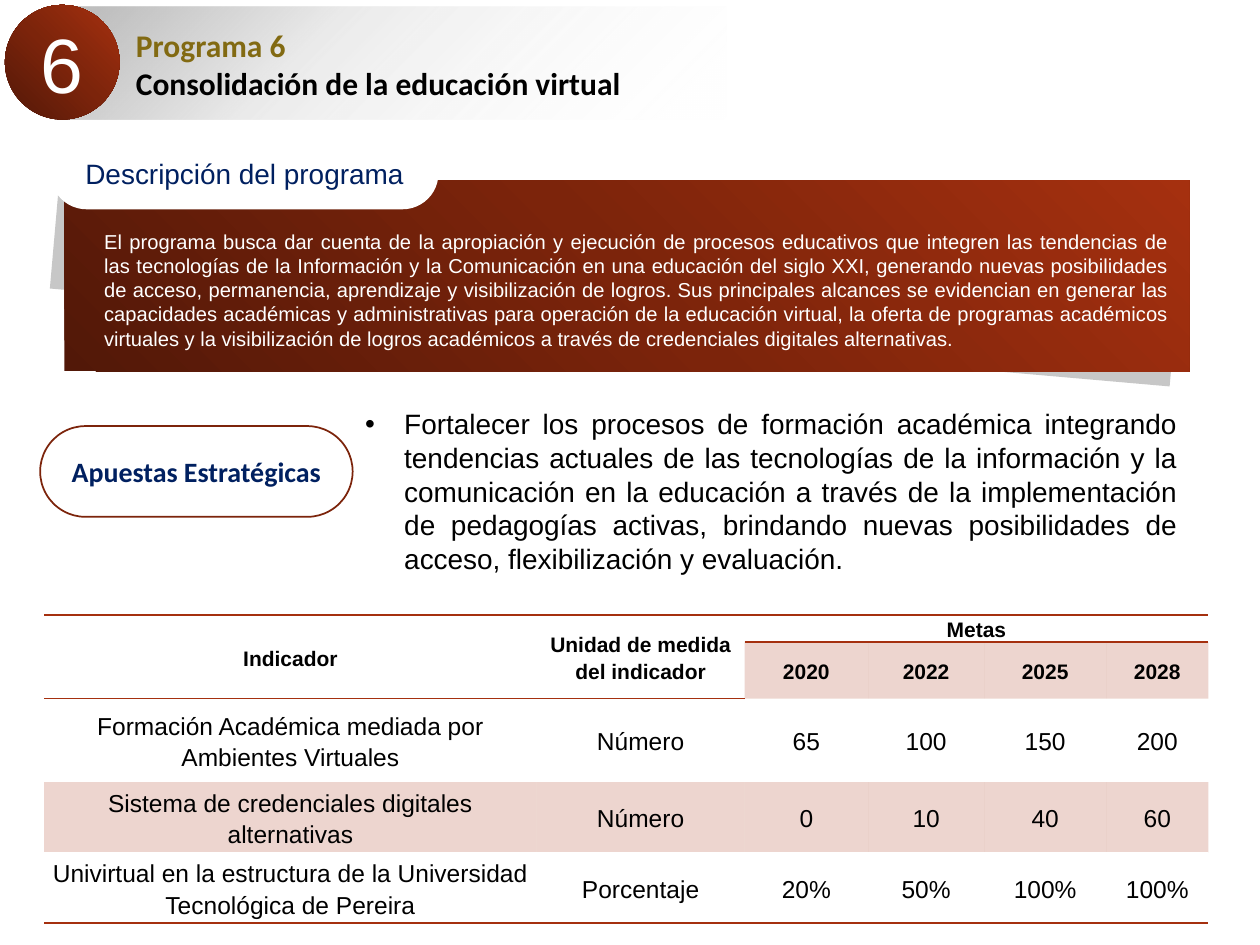
"""Build the slide for Programa 6, the consolidation of virtual education."""
from pptx import Presentation, util as u
from pptx.dml.color import RGBColor
from pptx.enum import shapes, text
from pptx.oxml import ns, xmlchemy

THEME = {
    "colors": {
        "rust": "A5300F", "brick": "7C240B", "maroon": "521808", "white": "FFFFFF",
        "black": "000000", "navy": "002060", "olive": "826A12", "silver": "BFBFBF",
        "shade": "323232",
    },
    "styles": {
        "number": {"name": "Arial", "size": u.Pt(44), "color": "white"},
        "program": {"name": "Calibri", "size": u.Pt(18), "bold": True, "color": "olive"},
        "title": {"name": "Calibri", "size": u.Pt(18), "bold": True, "color": "black"},
        "tab": {"name": "Arial", "size": u.Pt(16), "color": "navy"},
        "label": {"name": "Calibri", "size": u.Pt(16), "bold": True, "color": "navy"},
        "summary": {"name": "Arial", "size": u.Pt(11.5), "color": "white"},
        "bullet": {"name": "Arial", "size": u.Pt(16), "color": "black"},
        "header": {"name": "Arial", "size": u.Pt(12), "bold": True, "color": "black"},
        "body": {"name": "Arial", "size": u.Pt(14), "color": "black"},
    },
}
RUST_FADE = [(0, "maroon", 100), (50, "brick", 100), (100, "rust", 100)]
SILVER_FADE = [(5, "silver", 100), (37, "silver", 31), (100, "white", 0)]
TINT = ("rust", 20)
PLAIN = ("white", 100)

SUMMARY = (
    "El programa busca dar cuenta de la apropiación y ejecución de procesos educativos que "
    "integren las tendencias de las tecnologías de la Información y la Comunicación en una "
    "educación del siglo XXI, generando nuevas posibilidades de acceso, permanencia, "
    "aprendizaje y visibilización de logros. Sus principales alcances se evidencian en generar "
    "las capacidades académicas y administrativas para operación de la educación virtual, la "
    "oferta de programas académicos virtuales y la visibilización de logros académicos a "
    "través de credenciales digitales alternativas."
)
STRATEGY = (
    "Fortalecer los procesos de formación académica integrando tendencias actuales de las "
    "tecnologías de la información y la comunicación en la educación a través de la "
    "implementación de pedagogías activas, brindando nuevas posibilidades de acceso, "
    "flexibilización y evaluación."
)
SHAPES = [
    {"kind": "RECTANGLE", "at": (1.07, 4.32, 22.66, 2.49), "fill": ("shade", 27), "rotation": 5},
    {"kind": "RECTANGLE", "at": (1.3, 3.63, 22.68, 3.86), "fade": RUST_FADE, "angle": 45},
    {"kind": "ROUNDED_RECTANGLE", "at": (1.02, 2.77, 7.82, 1.45), "fill": PLAIN,
     "lines": [("Descripción del programa", "tab")]},
    {"kind": "RECTANGLE", "at": (0.15, 0.18, 5, 1.63), "fill": PLAIN, "line": "white"},
    {"kind": "RECTANGLE", "at": (1.3, 0.13, 13.34, 2.29), "fade": SILVER_FADE, "angle": 315},
    {"kind": "OVAL", "at": (0.1, 0.1, 2.31, 2.31), "fade": RUST_FADE, "angle": 45,
     "lines": [("6", "number")]},
    {"kind": "ROUNDED_RECTANGLE", "at": (0.81, 8.59, 6.3, 1.83), "fill": PLAIN, "line": "brick",
     "lines": [("Apuestas Estratégicas", "label")]},
]
TEXTS = [
    {"at": (1.85, 4.5, 21.95, 2.72), "lines": [(SUMMARY, "summary")]},
    {"at": (2.49, 0.41, 19.08, 1.8),
     "lines": [("Programa 6", "program"), ("Consolidación de la educación virtual", "title")]},
    {"at": (7.11, 8.08, 16.87, 3.68), "lines": [(STRATEGY, "bullet")]},
]
TABLE = {
    "at": (0.89, 12.4),
    "columns": (9.93, 4.19, 2.49, 2.34, 2.46, 2.06),
    "rows": (0.53, 1.14, 1.68, 1.42, 1.42),
    "merges": [((0, 0), (1, 0)), ((0, 1), (1, 1)), ((0, 2), (0, 5))],
    "cells": [
        ("Indicador", "Unidad de medida del indicador", "Metas", "", "", ""),
        ("", "", "2020", "2022", "2025", "2028"),
        ("Formación Académica mediada por Ambientes Virtuales", "Número", "65", "100", "150", "200"),
        ("Sistema de credenciales digitales alternativas", "Número", "0", "10", "40", "60"),
        ("Univirtual en la estructura de la Universidad Tecnológica de Pereira", "Porcentaje",
         "20%", "50%", "100%", "100%"),
    ],
}
NO_STYLE = "{2D5ABB26-0587-4C30-8999-92F81FD0307C}"


def rgb(name):
    return RGBColor.from_string(THEME["colors"][name])


def add_node(parent, tag, **attributes):
    node = xmlchemy.OxmlElement(tag)
    for key, value in attributes.items():
        node.set(key, str(value))
    parent.append(node)
    return node


def add_color(parent, name, alpha=100):
    color = add_node(parent, "a:srgbClr", val=THEME["colors"][name])
    if alpha < 100:
        add_node(color, "a:alpha", val=alpha * 1000)


def paint(fill, properties, name, alpha):
    fill.solid()
    solid = properties.find(ns.qn("a:solidFill"))
    add_color(solid, name, alpha)


def fade(shape, stops, angle):
    shape.fill.gradient()
    shape.fill.gradient_angle = angle
    stop_list = shape.element.spPr.find(ns.qn("a:gradFill")).find(ns.qn("a:gsLst"))
    for old in list(stop_list):
        stop_list.remove(old)
    for position, name, alpha in stops:
        add_color(add_node(stop_list, "a:gs", pos=position * 1000), name, alpha)


def write(frame, lines, align, spacing=None):
    for index, (words, style) in enumerate(lines):
        para = frame.add_paragraph() if index else frame.paragraphs[0]
        if style == "bullet":
            properties = para._p.get_or_add_pPr()
            indent = u.Cm(0.79)
            properties.set("marL", str(indent))
            properties.set("indent", str(-indent))
            add_node(properties, "a:buFont", typeface="Arial")
            add_node(properties, "a:buChar", char="•")
        para.alignment = align
        para.line_spacing = spacing
        span = para.add_run()
        span.text = words
        for key, value in THEME["styles"][style].items():
            if key == "color":
                span.font.color.rgb = rgb(value)
            else:
                setattr(span.font, key, value)


def draw_shape(page, item):
    shape = page.shapes.add_shape(getattr(shapes.MSO_SHAPE, item["kind"]), *map(u.Cm, item["at"]))
    shape.shadow.inherit = False
    shape.rotation = item.get("rotation", 0)
    if item["kind"] == "ROUNDED_RECTANGLE":
        shape.adjustments[0] = 0.5
    if "fade" in item:
        fade(shape, item["fade"], item["angle"])
    else:
        paint(shape.fill, shape.element.spPr, *item["fill"])
    if "line" in item:
        shape.line.color.rgb = rgb(item["line"])
        shape.line.width = u.Pt(1)
    else:
        shape.line.fill.background()
    if "lines" in item:
        shape.text_frame.vertical_anchor = text.MSO_ANCHOR.MIDDLE
        shape.text_frame.word_wrap = item["kind"] != "OVAL"
        write(shape.text_frame, item["lines"], text.PP_ALIGN.CENTER)


def draw_text(page, item):
    frame = page.shapes.add_textbox(*map(u.Cm, item["at"])).text_frame
    frame.word_wrap = True
    frame.auto_size = text.MSO_AUTO_SIZE.SHAPE_TO_FIT_TEXT
    write(frame, item["lines"], text.PP_ALIGN.JUSTIFY)


def format_cell(cell, row, column, words):
    margins = {"margin_left": u.Cm(0.13), "margin_right": u.Cm(0.13), "margin_top": 0,
               "margin_bottom": 0, "vertical_anchor": text.MSO_ANCHOR.MIDDLE}
    for key, value in margins.items():
        setattr(cell, key, value)
    properties = cell._tc.get_or_add_tcPr()
    edges = {"a:lnT": row == 0, "a:lnB": row in (0, 4) or (row == 1 and column < 2)}
    for tag, drawn in edges.items():
        if drawn:
            edge = add_node(properties, tag, w=u.Pt(1))
            add_color(add_node(edge, "a:solidFill"), "rust")
    if row == 0 or (row == 1 and column < 2):
        cell.fill.background()
    else:
        paint(cell.fill, properties, *(TINT if row % 2 else PLAIN))
    if words:
        style = "header" if row < 2 else "body"
        write(cell.text_frame, [(words, style)], text.PP_ALIGN.CENTER, 1.15)


def draw_table(page):
    columns, rows = TABLE["columns"], TABLE["rows"]
    size = (sum(columns), sum(rows))
    table = page.shapes.add_table(len(rows), len(columns), *map(u.Cm, TABLE["at"] + size)).table
    table.first_row = table.horz_banding = False
    table._tbl.tblPr.find(ns.qn("a:tableStyleId")).text = NO_STYLE
    for column, width in zip(table.columns, columns):
        column.width = u.Cm(width)
    for row, height in zip(table.rows, rows):
        row.height = u.Cm(height)
    for start, end in TABLE["merges"]:
        table.cell(*start).merge(table.cell(*end))
    for row, entries in enumerate(TABLE["cells"]):
        for column, words in enumerate(entries):
            format_cell(table.cell(row, column), row, column, words)


def main():
    deck = Presentation()
    deck.slide_width, deck.slide_height = u.Cm(25.4), u.Cm(19.05)
    page = deck.slides.add_slide(deck.slide_layouts[6])
    draw_table(page)
    for item in SHAPES:
        draw_shape(page, item)
    for item in TEXTS:
        draw_text(page, item)
    deck.save("out.pptx")


if __name__ == "__main__":
    main()
